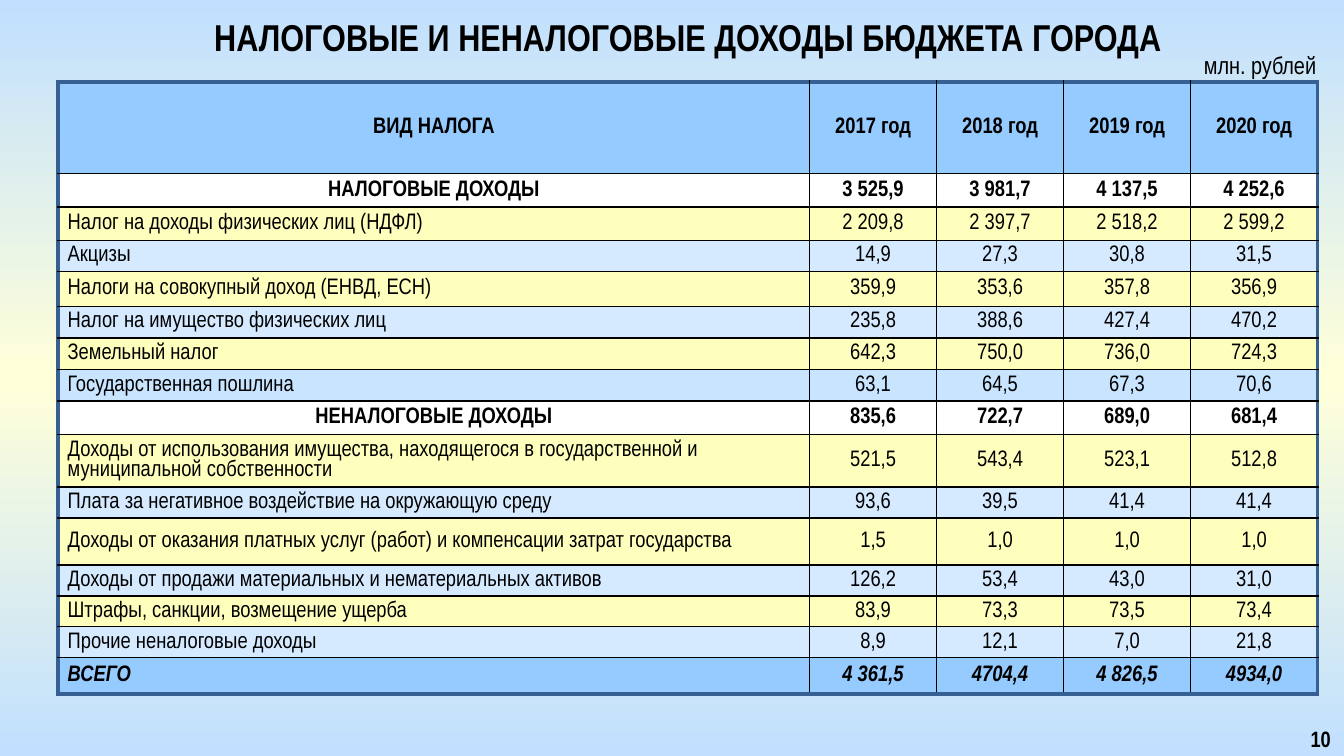
from copy import deepcopy
from dataclasses import dataclass

from lxml import etree
from pptx import Presentation
from pptx.dml.color import RGBColor
from pptx.enum.text import MSO_ANCHOR, PP_ALIGN
from pptx.oxml.ns import qn
from pptx.util import Inches, Pt

LEFT, CENTER, RIGHT, JUSTIFY = PP_ALIGN.LEFT, PP_ALIGN.CENTER, PP_ALIGN.RIGHT, PP_ALIGN.JUSTIFY
TOP, MIDDLE = MSO_ANCHOR.TOP, MSO_ANCHOR.MIDDLE


@dataclass(frozen=True)
class Theme:
    font: str = "Arial Narrow"
    ink: str = "000000"
    frame: str = "376092"
    edge: str = "C1E0FF"
    glow: str = "FFFFD9"
    strong: str = "96CBFF"
    section: str = "FFFFFF"
    yellow: str = "FFFFBD"
    blue: str = "D5EAFF"
    duty: str = "C9E4FF"
    title_size: float = 20
    unit_size: float = 13
    table_size: float = 12
    number_size: float = 11.9
    thin: float = 1
    thick: float = 2.25


theme = Theme()


def write_text(frame, text, size, align=LEFT, anchor=MIDDLE, bold=False, italic=False, spacing=1.0):
    frame.word_wrap = True
    frame.vertical_anchor = anchor
    paragraph = frame.paragraphs[0]
    paragraph.alignment = align
    paragraph.line_spacing = spacing
    run = paragraph.add_run()
    run.text = text
    run.font.name = theme.font
    run.font.size = Pt(size)
    run.font.bold = bold
    run.font.italic = italic
    run.font.color.rgb = RGBColor.from_string(theme.ink)


def add_border(cell, side, outer):
    properties = cell._tc.get_or_add_tcPr()
    width = theme.thick if outer else theme.thin
    line = etree.SubElement(properties, qn(f"a:ln{side}"), w=str(Pt(width)))
    fill = etree.SubElement(line, qn("a:solidFill"))
    etree.SubElement(fill, qn("a:srgbClr"), val=theme.frame if outer else theme.ink)


presentation = Presentation()
presentation.slide_width = Inches(10)
presentation.slide_height = presentation.slide_width * 9 // 16
unit = presentation.slide_width // 1000
slide = presentation.slides.add_slide(presentation.slide_layouts[6])

background = slide.background.fill
background.gradient()
background.gradient_angle = 270
stop_list = slide.element.find(".//" + qn("a:gsLst"))
stop_list.insert(1, deepcopy(stop_list[0]))
for stop, position, color in zip(background.gradient_stops, (0, 0.5, 1), (theme.edge, theme.glow, theme.edge)):
    stop.position = position
    stop.color.rgb = RGBColor.from_string(color)

rows = [
    (68, theme.strong, "ВИД НАЛОГА|2017 год|2018 год|2019 год|2020 год"),
    (25, theme.section, "НАЛОГОВЫЕ ДОХОДЫ|3 525,9|3 981,7|4 137,5|4 252,6"),
    (25, theme.yellow, "Налог на доходы физических лиц (НДФЛ)|2 209,8|2 397,7|2 518,2|2 599,2"),
    (23, theme.blue, "Акцизы|14,9|27,3|30,8|31,5"),
    (26, theme.yellow, "Налоги на совокупный доход (ЕНВД, ЕСН)|359,9|353,6|357,8|356,9"),
    (23.5, theme.blue, "Налог на имущество физических лиц|235,8|388,6|427,4|470,2"),
    (23.5, theme.yellow, "Земельный налог|642,3|750,0|736,0|724,3"),
    (23.5, theme.duty, "Государственная пошлина|63,1|64,5|67,3|70,6"),
    (25, theme.section, "НЕНАЛОГОВЫЕ ДОХОДЫ|835,6|722,7|689,0|681,4"),
    (39, theme.yellow, "Доходы от использования имущества, находящегося в государственной и "
                       "муниципальной собственности|521,5|543,4|523,1|512,8"),
    (23, theme.blue, "Плата за негативное воздействие на окружающую среду|93,6|39,5|41,4|41,4"),
    (35, theme.yellow, "Доходы от оказания платных услуг (работ) и компенсации затрат государства"
                       "|1,5|1,0|1,0|1,0"),
    (23, theme.blue, "Доходы от продажи материальных и нематериальных активов|126,2|53,4|43,0|31,0"),
    (23, theme.yellow, "Штрафы, санкции, возмещение ущерба|83,9|73,3|73,5|73,4"),
    (23, theme.blue, "Прочие неналоговые доходы|8,9|12,1|7,0|21,8"),
    (27, theme.strong, "ВСЕГО|4 361,5|4704,4|4 826,5|4934,0"),
]
columns = [559] + [94.5] * 4
last_row, last_column = len(rows) - 1, len(columns) - 1

table = slide.shapes.add_table(
    len(rows), len(columns), int(43.4 * unit), 61 * unit,
    int(sum(columns) * unit), int(sum(height for height, _, _ in rows) * unit),
).table
table.first_row = False
table.horz_banding = False
for column, width in zip(table.columns, columns):
    column.width = int(width * unit)

for row_index, (height, color, texts) in enumerate(rows):
    table.rows[row_index].height = int(height * unit)
    total = row_index == last_row
    bold = color in (theme.strong, theme.section)
    for column_index, text in enumerate(texts.split("|")):
        cell = table.cell(row_index, column_index)
        cell.margin_left = cell.margin_right = 7 * unit
        cell.margin_top = cell.margin_bottom = 4 * unit if bold else 0
        cell.vertical_anchor = MIDDLE
        add_border(cell, "L", column_index == 0)
        add_border(cell, "R", column_index == last_column)
        add_border(cell, "T", row_index == 0)
        add_border(cell, "B", total)
        cell.fill.solid()
        cell.fill.fore_color.rgb = RGBColor.from_string(color)
        centered = column_index > 0 or (bold and not total)
        write_text(cell.text_frame, text, theme.table_size, align=CENTER if centered else LEFT,
                   bold=bold, italic=total, spacing=0.93)

labels = [
    ((886, 32, 114, 32), "млн. рублей", dict(size=theme.unit_size, align=JUSTIFY)),
    ((83, 9, 858, 36), "НАЛОГОВЫЕ И НЕНАЛОГОВЫЕ ДОХОДЫ БЮДЖЕТА ГОРОДА",
     dict(size=theme.title_size, align=CENTER, bold=True)),
    ((933, 535, 67, 26), "10", dict(size=theme.number_size, align=RIGHT, anchor=TOP, bold=True)),
]
for place, text, style in labels:
    shape = slide.shapes.add_textbox(*(length * unit for length in place))
    write_text(shape.text_frame, text, **style)

presentation.save("out.pptx")
